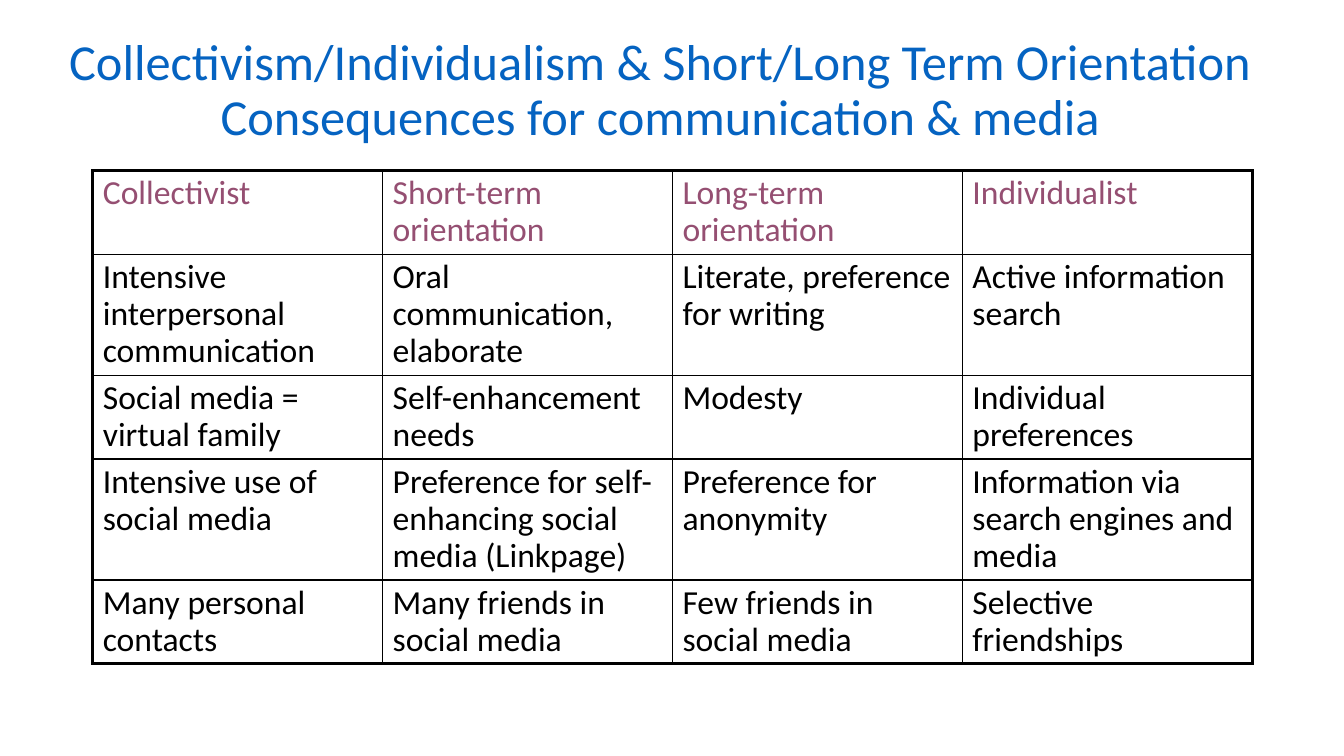
from lxml.etree import SubElement
from pptx import Presentation
from pptx.dml.color import RGBColor
from pptx.enum.text import MSO_ANCHOR, MSO_AUTO_SIZE, PP_ALIGN
from pptx.oxml.ns import qn
from pptx.util import Inches, Pt

BLUE = RGBColor(0x05, 0x63, 0xC1)
PLUM = RGBColor(0x95, 0x4F, 0x72)
BLACK = RGBColor(0, 0, 0)
OUTER, INNER = Pt(2.25), Pt(1)

ORIENTATIONS = [
    ["Collectivist", "Short-term orientation", "Long-term orientation", "Individualist"],
    ["Intensive interpersonal communication", "Oral communication, elaborate",
     "Literate, preference for writing", "Active information search"],
    ["Social media = virtual family", "Self-enhancement needs",
     "Modesty", "Individual preferences"],
    ["Intensive use of social media", "Preference for self-enhancing social media (Linkpage)",
     "Preference for anonymity", "Information via search engines and media"],
    ["Many personal contacts", "Many friends in social media",
     "Few friends in social media", "Selective friendships"],
]


def format_text(paragraph, size, color, **layout):
    for key, value in {"line_spacing": 0.9, **layout}.items():
        setattr(paragraph, key, value)
    font = paragraph.runs[0].font
    for key, value in {"name": "Calibri", "size": Pt(size)}.items():
        setattr(font, key, value)
    font.color.rgb = color


def add_border(cell, side, width):
    line = SubElement(cell._tc.get_or_add_tcPr(), qn(f"a:ln{side}"), w=str(width))
    fill = SubElement(line, qn("a:solidFill"))
    SubElement(fill, qn("a:srgbClr"), val=str(BLACK))


prs = Presentation()
prs.slide_width, prs.slide_height = Inches(13.33), Inches(7.5)
slide = prs.slides.add_slide(prs.slide_layouts[5])

heading = slide.shapes.title
place = {"left": 0.46, "top": 0.35, "width": 12.18, "height": 1.12}
for key, value in place.items():
    setattr(heading, key, Inches(value))
heading.text_frame.text = ("Collectivism/Individualism & Short/Long Term Orientation "
                           "Consequences for communication & media")
frame_format = {"auto_size": MSO_AUTO_SIZE.NONE, "word_wrap": True,
                "vertical_anchor": MSO_ANCHOR.MIDDLE}
for key, value in frame_format.items():
    setattr(heading.text_frame, key, value)
format_text(heading.text_frame.paragraphs[0], 36, BLUE, alignment=PP_ALIGN.CENTER)

row_count, column_count = len(ORIENTATIONS), len(ORIENTATIONS[0])
consequences = slide.shapes.add_table(
    row_count, column_count, Inches(0.92), Inches(1.69),
    Inches(11.5), Inches(0.63 * row_count)).table
consequences.first_row = consequences.horz_banding = False

for r, texts in enumerate(ORIENTATIONS):
    for c, text in enumerate(texts):
        cell = consequences.cell(r, c)
        cell.text = text
        format_text(cell.text_frame.paragraphs[0], 24, BLACK if r else PLUM,
                    space_before=Pt(10))
        at_edge = {"L": c == 0, "R": c == column_count - 1,
                   "T": r == 0, "B": r == row_count - 1}
        for side, is_outer in at_edge.items():
            add_border(cell, side, OUTER if is_outer else INNER)
        cell.fill.background()

prs.save("out.pptx")
